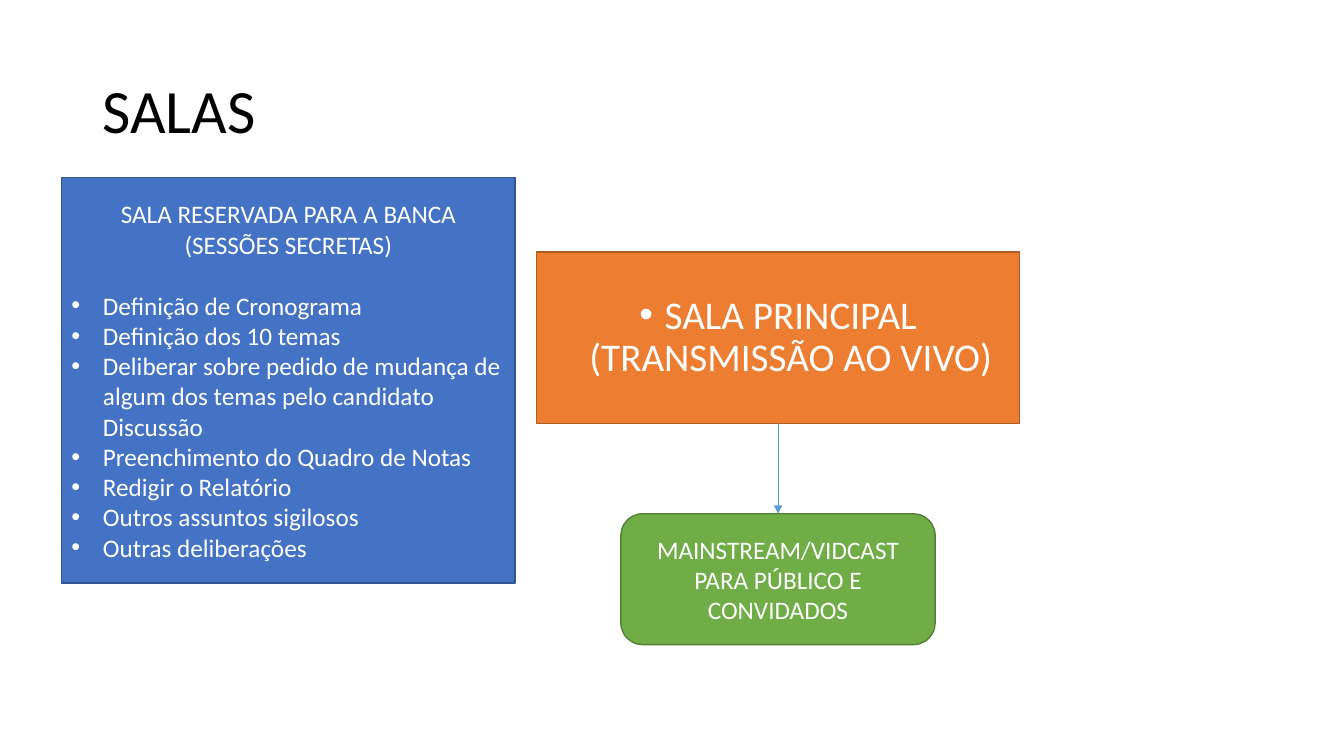
import pptx
import pptx.dml.color
import pptx.enum.shapes
import pptx.enum.text
import pptx.oxml
import pptx.oxml.ns
import pptx.util
from lxml import etree

Pt = pptx.util.Pt
ALIGN = pptx.enum.text.PP_ALIGN
SHAPE = pptx.enum.shapes.MSO_SHAPE
qn = pptx.oxml.ns.qn


def colour(value):
    return pptx.dml.color.RGBColor.from_string(value)


class Deck:
    font = "Calibri"
    text_colour = "FFFFFF"

    def __init__(self, width, height):
        self.prs = pptx.Presentation()
        self.prs.slide_width, self.prs.slide_height = Pt(width), Pt(height)
        self.slide = self.prs.slides.add_slide(self.prs.slide_layouts[1])

    def frame(self, shape):
        text = shape.text_frame
        text.word_wrap = True
        text.auto_size = pptx.enum.text.MSO_AUTO_SIZE.NONE
        text.vertical_anchor = pptx.enum.text.MSO_ANCHOR.MIDDLE
        return text

    def paragraph(self, shape, lines, size=18, align=ALIGN.CENTER, indent=0,
                  before=0, spacing=1.0, ink=None):
        """Add a paragraph; lines are parted by line breaks."""
        text = self.frame(shape)
        para = text.paragraphs[0]
        if para.runs:
            para = text.add_paragraph()
        para.alignment = align
        para.line_spacing = spacing
        para.space_before, para.space_after = Pt(before), Pt(0)
        if indent:
            props = para._p.get_or_add_pPr()
            props.set("marL", str(Pt(indent)))
            props.set("indent", str(-Pt(indent)))
            etree.SubElement(props, qn("a:buFont")).set("typeface", "Arial")
            etree.SubElement(props, qn("a:buChar")).set("char", "•")
        for number, line in enumerate(lines):
            if number:
                para.add_line_break()
            run = para.add_run()
            run.text = line
            run.font.name, run.font.size = self.font, Pt(size)
            run.font.color.rgb = colour(ink or self.text_colour)

    def placeholder(self, index, left, top, width, height):
        holder = self.slide.placeholders[index]
        holder.left, holder.top = Pt(left), Pt(top)
        holder.width, holder.height = Pt(width), Pt(height)
        return holder

    def paint(self, shape, fill, line):
        shape.fill.solid()
        shape.fill.fore_color.rgb = colour(fill)
        shape.line.color.rgb = colour(line)
        shape.line.width = Pt(1)

    def box(self, kind, left, top, width, height, fill, line):
        shape = self.slide.shapes.add_shape(
            kind, Pt(left), Pt(top), Pt(width), Pt(height))
        shape.shadow.inherit = False
        self.paint(shape, fill, line)
        return shape

    def arrow_down(self, upper, lower, line):
        arrow = self.slide.shapes.add_connector(
            pptx.enum.shapes.MSO_CONNECTOR.STRAIGHT, 0, 0, 0, 0)
        arrow.begin_connect(upper, 2)
        arrow.end_connect(lower, 0)
        arrow.line.color.rgb = colour(line)
        arrow.line.width = Pt(0.5)
        etree.SubElement(arrow.line._get_or_add_ln(), qn("a:tailEnd")).set("type", "triangle")
        etree.SubElement(arrow._element.spPr, qn("a:effectLst"))


def main():
    deck = Deck(960, 540)

    # Title
    title = deck.placeholder(0, 66, 28.8, 828, 104.4)
    deck.paragraph(title, ["SALAS"], 44, ALIGN.LEFT, spacing=0.9, ink="000000")

    # Reserved room: heading, then its list of tasks
    reserved_room = deck.box(SHAPE.RECTANGLE, 44, 127, 324, 289.5, "4472C4", "325491")
    for heading in ("SALA RESERVADA PARA A BANCA", "(SESSÕES SECRETAS)"):
        deck.paragraph(reserved_room, [heading])
    tasks = [
        ["Definição de Cronograma"],
        ["Definição dos 10 temas"],
        ["Deliberar sobre pedido de mudança de algum dos temas pelo candidato",
         "Discussão"],
        ["Preenchimento do Quadro de Notas"],
        ["Redigir o Relatório"],
        ["Outros assuntos sigilosos"],
        ["Outras deliberações"],
    ]
    for number, task in enumerate(tasks):
        deck.paragraph(reserved_room, task, align=ALIGN.LEFT, indent=22.5,
                       before=0 if number else 22)

    # Main room
    main_room = deck.placeholder(1, 383.25, 180, 345, 122.5)
    deck.paint(main_room, "ED7D31", "AF5C24")
    deck.paragraph(main_room, ["SALA PRINCIPAL (TRANSMISSÃO AO VIVO)"], 28,
                   indent=18, before=10, spacing=0.9)

    # Public broadcast, fed by the main room
    broadcast = deck.box(SHAPE.ROUNDED_RECTANGLE, 443.5, 367, 224.5, 93.5,
                         "70AD47", "538035")
    for line in ("MAINSTREAM/VIDCAST", "PARA PÚBLICO E CONVIDADOS"):
        deck.paragraph(broadcast, [line])
    deck.arrow_down(main_room, broadcast, "5B9BD5")

    deck.prs.save("out.pptx")


if __name__ == "__main__":
    main()
